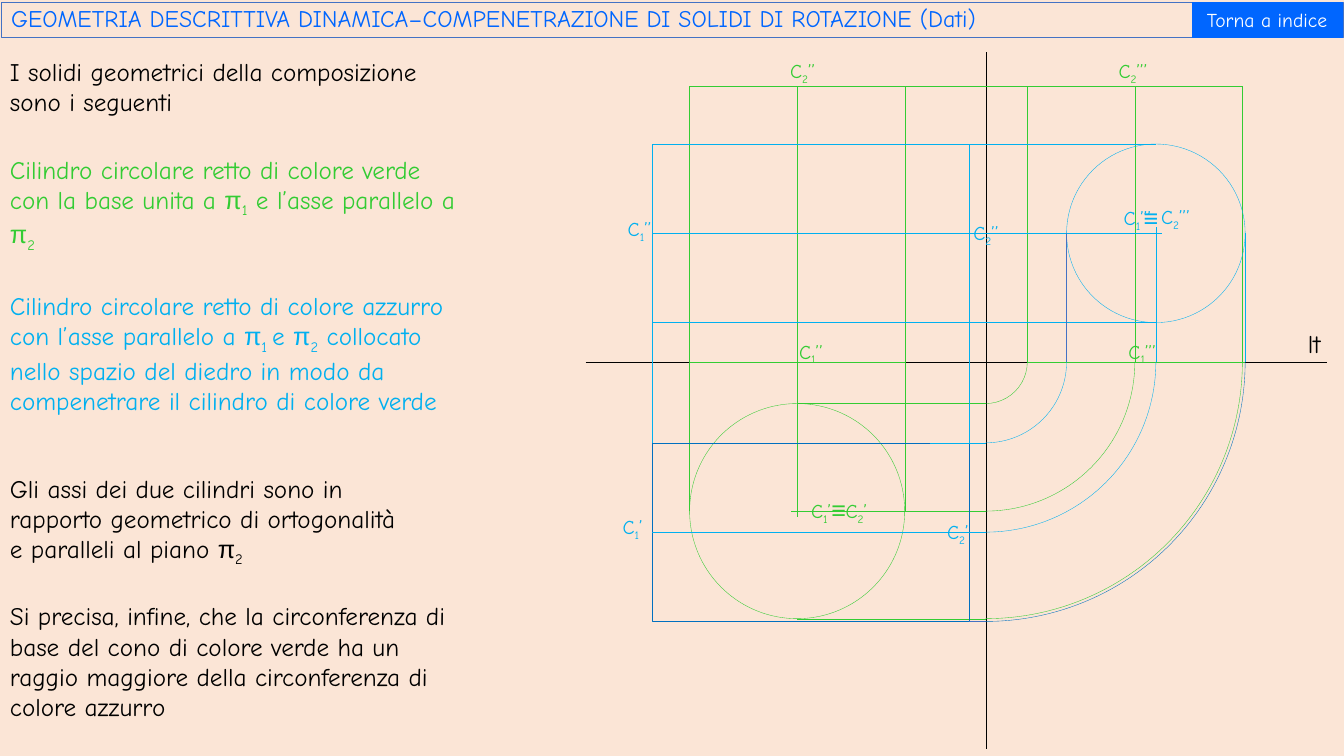
import itertools

import pptx
import pptx.dml.color
import pptx.enum.shapes
import pptx.enum.text
import pptx.util
from lxml import etree
from pptx.oxml.ns import qn

Cm = pptx.util.Cm
SHAPES = pptx.enum.shapes.MSO_SHAPE
ANCHOR = pptx.enum.text.MSO_ANCHOR
ALIGN = pptx.enum.text.PP_ALIGN

COLORS = {
    "sand": "FBE5D6", "black": "000000", "white": "FFFFFF", "green": "33CC33",
    "azure": "00B0F0", "navy": "0070C0", "steel": "4472C4", "royal": "0066FF",
}
HAIRLINE = pptx.util.Pt(0.25)
LABEL_FRAME = {"word_wrap": True, "margin_right": 0}
TITLE_FRAME = {"word_wrap": True, "vertical_anchor": ANCHOR.BOTTOM}
BUTTON_FRAME = {"word_wrap": True, "vertical_anchor": ANCHOR.MIDDLE}

EXPLANATIONS = [
    (0, 11.66, 1.8, "black", "I solidi geometrici della composizione sono i seguenti"),
    (2.46, 11.76, 2.57, "green",
     "Cilindro circolare retto di colore verde con la base unita a π_1 e l’asse parallelo a π_2"),
    (5.89, 11.76, 4.11, "azure",
     "Cilindro circolare retto di colore azzurro con l’asse parallelo a π_1_ e π_2 collocato "
     "nello spazio del diedro in modo da compenetrare il cilindro di colore verde"),
    (10.49, 10.46, 2.57, "black",
     "Gli assi dei due cilindri sono in rapporto geometrico di ortogonalità "
     "e paralleli al piano π_2"),
    (13.71, 11.91, 3.33, "black",
     "Si precisa, infine, che la circonferenza di base del cono di colore verde ha un raggio "
     "maggiore della circonferenza di colore azzurro"),
]

POINT_LABELS = {
    "green": [
        (-4.65, 3.33, "C_1’"), (-4.95, -0.69, "C_1’’"), (-3.78, 3.33, "C_2’"),
        (-5.18, -7.77, "C_2’’"), (-4.14, 3.2, "≡"),
        (3.35, -0.69, "C_1’’’"), (3.1, -7.77, "C_2’’’"),
    ],
    "azure": [
        (-9.4, 3.73, "C_1’"), (-1.22, 3.86, "C_2’"), (3.73, -4.14, "≡"),
        (-9.27, -3.78, "C_1’’"), (-0.56, -3.68, "C_2’’"),
        (4.17, -4.09, "C_2’’’"), (3.23, -4.06, "C_1’’’"),
    ],
}


def rgb(color):
    return pptx.dml.color.RGBColor.from_string(COLORS[color])


def styled_chars(text):
    chars = iter(text)
    for char in chars:
        lowered = char == "_"
        if lowered:
            char = next(chars)
        yield char, lowered, "Arial" if char in "π≡" else "Comic Neue"


def write(frame, text, size, color, settings, align=ALIGN.LEFT, spacing=None):
    for name, value in settings.items():
        setattr(frame, name, value)
    line = frame.paragraphs[0]
    line.alignment = align
    line.line_spacing = spacing
    for (lowered, face), chars in itertools.groupby(styled_chars(text), lambda c: c[1:]):
        run = line.add_run()
        run.text = "".join(char for char, *_ in chars)
        font_values = {"name": face, "size": pptx.util.Pt(size)}
        for name, value in font_values.items():
            setattr(run.font, name, value)
        run.font.color.rgb = rgb(color)
        if lowered:
            run._r.get_or_add_rPr().set("baseline", "-25000")


def add_text(slide, x, y, width, height, text, size, color, settings, align=ALIGN.LEFT):
    frame = slide.shapes.add_textbox(Cm(x), Cm(y), Cm(width), Cm(height)).text_frame
    write(frame, text, size, color, settings, align)


def add_outline(slide, kind, x, y, width, height, color):
    outline = slide.shapes.add_shape(kind, Cm(x), Cm(y), Cm(width), Cm(height))
    outline.shadow.inherit = False
    outline.fill.background()
    outline.line.color.rgb = rgb(color)
    outline.line.width = HAIRLINE
    return outline


def header(slide, left, top, width, height):
    title = add_outline(slide, SHAPES.RECTANGLE, left, top, width, height, "steel")
    write(title.text_frame,
          "GEOMETRIA DESCRITTIVA DINAMICA–COMPENETRAZIONE DI SOLIDI DI ROTAZIONE (Dati)",
          17, "royal", TITLE_FRAME, spacing=0.9)
    button_width = 3.81
    index_button = add_outline(slide, SHAPES.ACTION_BUTTON_CUSTOM, left + width - button_width,
                               top, button_width, height, "royal")
    index_button.fill.solid()
    index_button.fill.fore_color.rgb = rgb("royal")
    index_button.line.fill.background()
    write(index_button.text_frame, "Torna a indice", 14, "white", BUTTON_FRAME, ALIGN.CENTER)


def explanation(slide, left, top):
    for offset, width, height, color, text in EXPLANATIONS:
        add_text(slide, left, top + offset, width, height, text, 18, color, {"word_wrap": True})


def projections(slide, left, top, width, height):
    origin_x, ground_y = left + 10.08, top + 7.82

    def segment(color, x1, y1, x2, y2):
        edge = slide.shapes.add_connector(
            pptx.enum.shapes.MSO_CONNECTOR.STRAIGHT,
            Cm(origin_x + x1), Cm(ground_y + y1), Cm(origin_x + x2), Cm(ground_y + y2))
        edge.line.color.rgb = rgb(color)
        edge.line.width = HAIRLINE
        etree.SubElement(edge._element.spPr, qn("a:effectLst"))

    def circle(color, x, y, radius, kind=SHAPES.OVAL):
        return add_outline(slide, kind, origin_x + x - radius, ground_y + y - radius,
                           2 * radius, 2 * radius, color)

    def cross(color, x, y):
        arm = 0.15
        segment(color, x - arm, y, x + arm, y)
        segment(color, x, y - arm, x, y + arm)

    green_radius, green_x, green_depth, green_top = 2.71, -4.75, 3.76, -6.96
    green_left, green_right = green_x - green_radius, green_x + green_radius
    green_near, green_far = green_depth - green_radius, green_depth + green_radius
    azure_radius, azure_depth, azure_axis = 2.25, 4.29, -3.24
    azure_left, azure_right = -8.41, -0.41
    azure_near, azure_far = azure_depth - azure_radius, azure_depth + azure_radius
    azure_top, azure_bottom = azure_axis - azure_radius, azure_axis + azure_radius

    segment("black", -10.08, 0, width - 10.08, 0)
    segment("black", 0, height - 7.82, 0, -7.82)

    circle("green", green_x, green_depth, green_radius)
    for x in (green_left, green_right):
        segment("green", x, green_depth, x, green_top)
    segment("green", green_x, green_depth, green_x, 0)
    segment("green", green_x, 0, green_x, green_top)
    for depth in (green_near, green_depth, green_far):
        segment("green", green_x, depth, 0, depth)
        segment("green", depth, 0, depth, green_top)
    segment("green", green_left, green_top, green_right, green_top)
    segment("green", green_right, green_top, green_far, green_top)
    segment("green", green_left, 0, green_right, 0)
    segment("green", green_near, 0, azure_far, 0)
    cross("green", green_x, green_depth)

    add_outline(slide, SHAPES.RECTANGLE, origin_x + azure_left, ground_y + azure_near,
                azure_right - azure_left, 2 * azure_radius, "navy")
    circle("azure", azure_depth, azure_axis, azure_radius)
    for x in (azure_left, azure_right):
        segment("azure", x, azure_near, x, azure_top)
    for level, start in ((azure_top, azure_right), (azure_axis, -0.76),
                         (azure_bottom, azure_right)):
        segment("azure", azure_right, level, azure_left, level)
        segment("azure", start, level, azure_depth, level)
    segment("azure", azure_left, azure_depth, azure_right, azure_depth)
    for depth, start, depth_color, height_color in (
            (azure_near, -1.4, "azure", "steel"),
            (azure_depth, -1.78, "azure", "azure"),
            (azure_far, azure_right, "steel", "azure")):
        segment(depth_color, start, depth, 0, depth)
        segment(height_color, depth, 0, depth, azure_axis)
    cross("azure", azure_depth, azure_axis)

    for color, radius in (("green", green_near), ("azure", azure_near), ("green", green_depth),
                          ("azure", azure_depth), ("green", green_far), ("navy", azure_far)):
        rotation = circle(color, 0, 0, radius, SHAPES.ARC)
        rotation.adjustments[0] = 0
        rotation.adjustments[1] = 54

    for color, labels in POINT_LABELS.items():
        for x, y, text in labels:
            congruent = text == "≡"
            add_text(slide, origin_x + x, ground_y + y,
                     0.61 if congruent else 1 + 0.1 * text.count("’"), 0.71, text,
                     18 if congruent else 14, color, LABEL_FRAME,
                     ALIGN.JUSTIFY if congruent else ALIGN.LEFT)
    add_text(slide, origin_x + 7.87, ground_y - 0.97, 1.3, 1.02, "lt", 18, "black", LABEL_FRAME)


def main():
    deck = pptx.Presentation()
    deck.slide_width, deck.slide_height = Cm(33.87), Cm(19.05)
    slide = deck.slides.add_slide(deck.slide_layouts[6])
    slide.background.fill.solid()
    slide.background.fill.fore_color.rgb = rgb("sand")
    projections(slide, 14.76, 1.3, 18.67, 17.57)
    explanation(slide, 0, 1.3)
    header(slide, 0.03, 0.05, 33.81, 0.9)
    deck.save("out.pptx")


if __name__ == "__main__":
    main()
